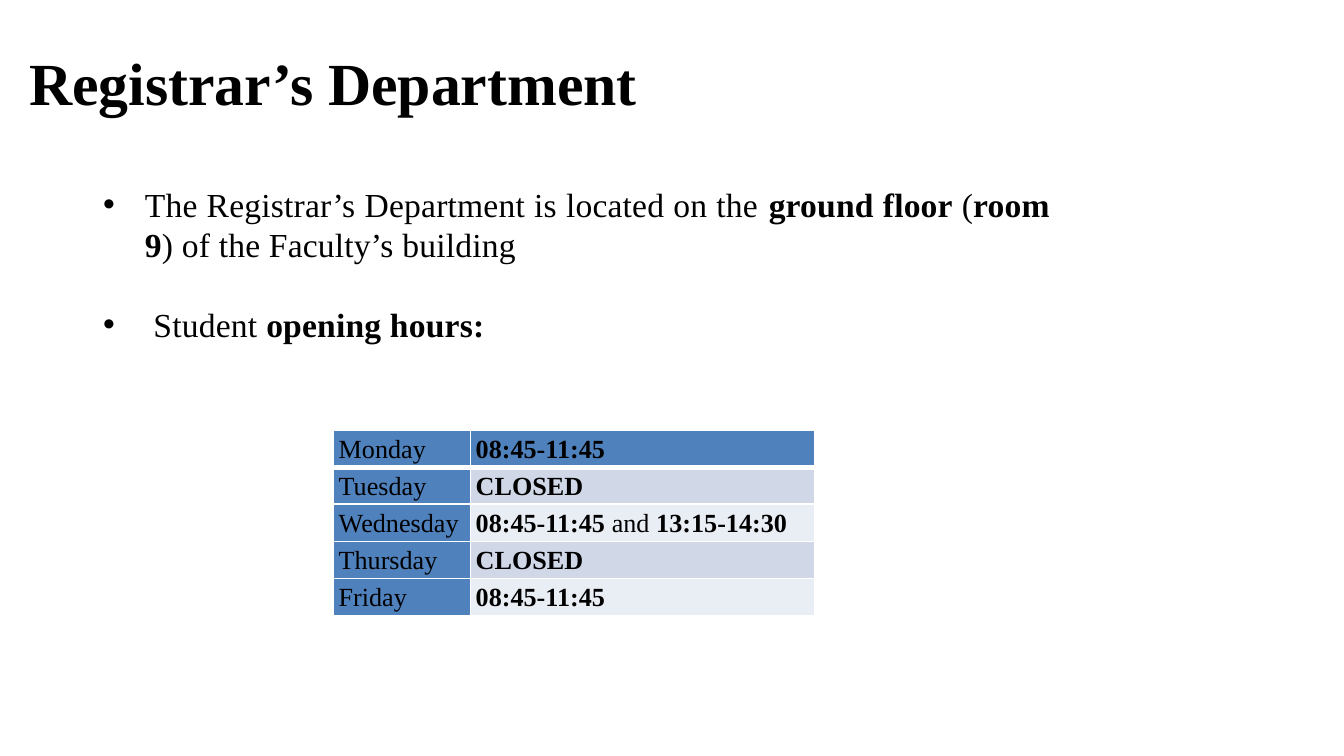
"""Build the Registrar's Department slide with its table of opening hours."""
from lxml.etree import SubElement
from pptx import Presentation
from pptx.dml.color import RGBColor
from pptx.enum.text import MSO_ANCHOR as Anchor, PP_ALIGN as Align
from pptx.oxml.ns import qn
from pptx.util import Inches, Pt

BLACK = RGBColor(0x00, 0x00, 0x00)
WHITE = RGBColor(0xFF, 0xFF, 0xFF)
BLUE = RGBColor(0x4F, 0x81, 0xBD)
BAND_DARK = RGBColor(0xD0, 0xD8, 0xE8)
BAND_LIGHT = RGBColor(0xE9, 0xED, 0xF4)
FONT = "Times New Roman"

BULLETS = [
    [("The Registrar’s Department is located on the ", False),
     ("ground floor ", True), ("(", False), ("room 9", True),
     (") of the Faculty’s building", False)],
    [(" Student ", False), ("opening hours:", True)],
]
HOURS = [
    ("Monday", [("08:45-11:45", True)]),
    ("Tuesday", [("CLOSED", True)]),
    ("Wednesday", [("08:45-11:45", True), (" and ", False), ("13:15-14:30", True)]),
    ("Thursday", [("CLOSED", True)]),
    ("Friday", [("08:45-11:45", True)]),
]


def add_spans(para, spans, size, spacing=None):
    for text, bold in spans:
        span = para.add_run()
        span.text = text
        span.font.name = FONT
        span.font.size = Pt(size)
        span.font.bold = bold
        span.font.color.rgb = BLACK
        if spacing:
            span.font._element.set("spc", str(round(spacing * 100)))


def add_box(page, left, top, width, height, anchor=Anchor.TOP):
    box = page.shapes.add_textbox(Inches(left), Inches(top), Inches(width), Inches(height))
    box.text_frame.word_wrap = True
    box.text_frame.vertical_anchor = anchor
    return box.text_frame


def set_bullet(para, indent):
    props = para._p.get_or_add_pPr()
    props.set("marL", str(Inches(indent)))
    props.set("indent", str(-Inches(indent)))
    SubElement(props, qn("a:buFont"), typeface="Arial")
    SubElement(props, qn("a:buChar"), char="•")


def add_bullets(page):
    frame = add_box(page, 0.67, 1.32, 7.24, 2.26)
    for index, spans in enumerate(BULLETS):
        para = frame.add_paragraph() if index else frame.paragraphs[0]
        set_bullet(para, 0.31)
        para.alignment = Align.JUSTIFY
        if index:
            para.space_before = Pt(21)
        add_spans(para, spans, 18, 0.1)


def set_borders(cell, top, bottom):
    props = cell._tc.get_or_add_tcPr()
    for side, width in (("L", 1), ("R", 1), ("T", top), ("B", bottom)):
        line = SubElement(props, qn(f"a:ln{side}"), w=str(Pt(width)))
        fill = SubElement(line, qn("a:solidFill"))
        SubElement(fill, qn("a:srgbClr"), val=str(WHITE))


def fill_cell(cell, spans, color, row):
    set_borders(cell, 3 if row == 1 else 1, 3 if row == 0 else 1)
    cell.fill.solid()
    cell.fill.fore_color.rgb = color
    cell.vertical_anchor = Anchor.MIDDLE
    cell.margin_left = cell.margin_right = Inches(0.04)
    cell.margin_top = cell.margin_bottom = 0
    para = cell.text_frame.paragraphs[0]
    para.line_spacing = 1.07
    para.space_after = Pt(8)
    add_spans(para, spans, 14)


def add_hours_table(page):
    frame = page.shapes.add_table(len(HOURS), 2, Inches(2.48), Inches(3.2),
                                  Inches(3.58), Inches(1.38))
    table = frame.table
    table.first_col = True
    table.columns[0].width = Inches(1.02)
    table.columns[1].width = Inches(2.56)
    for row, (day, hours) in enumerate(HOURS):
        band = BAND_DARK if row % 2 else BAND_LIGHT
        fill_cell(table.cell(row, 0), [(day, False)], BLUE, row)
        fill_cell(table.cell(row, 1), hours, band if row else BLUE, row)


def main():
    deck = Presentation()
    deck.slide_width = Inches(10)
    deck.slide_height = deck.slide_width * 9 // 16
    page = deck.slides.add_slide(deck.slide_layouts[6])
    title = add_box(page, 0.12, 0.14, 9, 0.94, Anchor.MIDDLE)
    add_spans(title.paragraphs[0], [("Registrar’s Department", True)], 32)
    add_bullets(page)
    add_hours_table(page)
    deck.save("out.pptx")


if __name__ == "__main__":
    main()
